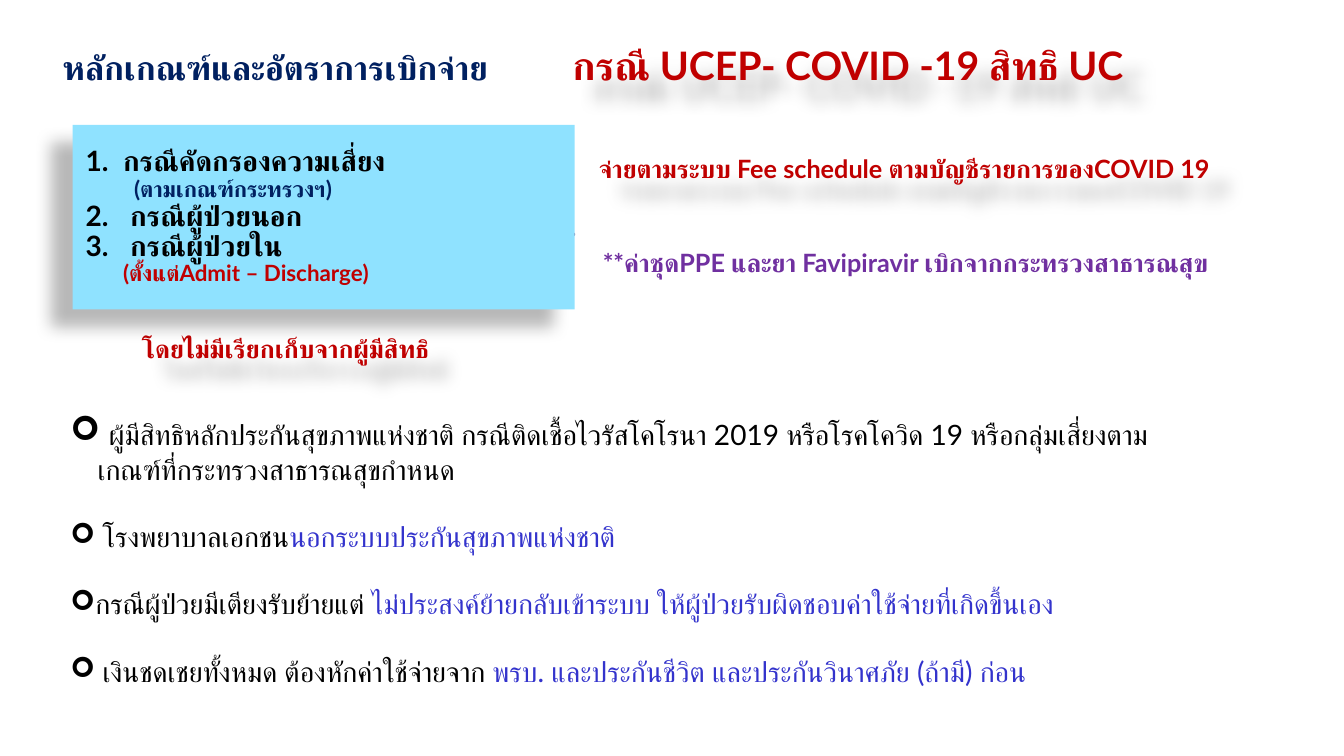
from lxml import etree
from pptx import Presentation
from pptx.dml.color import RGBColor
from pptx.enum.shapes import MSO_SHAPE
from pptx.enum.text import MSO_ANCHOR, MSO_AUTO_SIZE, PP_ALIGN
from pptx.oxml.ns import qn
from pptx.util import Inches, Pt

LEFT, CENTER = PP_ALIGN.LEFT, PP_ALIGN.CENTER
TOP, MIDDLE = MSO_ANCHOR.TOP, MSO_ANCHOR.MIDDLE
BLACK = RGBColor(0x00, 0x00, 0x00)
NAVY = RGBColor(0x00, 0x20, 0x60)
CRIMSON = RGBColor(0xC0, 0x00, 0x00)
PURPLE = RGBColor(0x70, 0x30, 0xA0)
BLUE = RGBColor(0x33, 0x33, 0xCC)
SKY = RGBColor(0x8F, 0xE2, 0xFF)
RED = RGBColor(0xFF, 0x00, 0x00)
MAUVE = RGBColor(0x80, 0x62, 0x92)
FONT = "Lato"


def add_span(para, text, size, color, bold=True):
    span = para.add_run()
    span.text = text
    span.font.name = FONT
    span.font.size = Pt(size)
    span.font.bold = bold
    span.font.color.rgb = color
    # Thai letters take the complex-script font
    etree.SubElement(span.font._element, qn("a:cs"), typeface=FONT)


def cast_shadow(shape, degrees):
    shape.shadow.inherit = False
    effects = shape._element.spPr.find(qn("a:effectLst"))
    shadow = etree.SubElement(
        effects, qn("a:outerShdw"), blurRad=str(Pt(11.8)), dist=str(Pt(19.7)),
        dir=str(degrees * 60000), algn="ctr", rotWithShape="0")
    tint = etree.SubElement(shadow, qn("a:srgbClr"), val="000000")
    etree.SubElement(tint, qn("a:alpha"), val="28000")


deck = Presentation()
deck.slide_width, deck.slide_height = Inches(13.33), Inches(7.5)
page = deck.slides.add_slide(deck.slide_layouts[5])

# Title
title = page.shapes.title
title.left, title.top = Inches(0.52), Inches(0.42)
title.width, title.height = Inches(6.82), Inches(0.5)
title.text_frame.auto_size = MSO_AUTO_SIZE.NONE
title.text_frame.vertical_anchor = TOP
title.text_frame.paragraphs[0].alignment = LEFT
add_span(title.text_frame.paragraphs[0], "หลักเกณฑ์และอัตราการเบิกจ่าย", 24, NAVY)

# Single-line statements: left, top, width, height, text, size, colour, align, spacing, shadow
STATEMENTS = [
    (3.89, 0.36, 9.04, 0.57, "กรณี UCEP- COVID -19 สิทธิ UC", 28, CRIMSON, CENTER, 1.0, True),
    (5.84, 1.51, 7.28, 0.58, "จ่ายตามระบบ Fee schedule ตามบัญชีรายการของCOVID 19",
     18, CRIMSON, LEFT, 0.9, True),
    (5.88, 2.4, 7.21, 0.4, "**ค่าชุดPPE และยา Favipiravir เบิกจากกระทรวงสาธารณสุข",
     18, PURPLE, LEFT, 1.0, False),
    (1.31, 3.26, 3.44, 0.4, "โดยไม่มีเรียกเก็บจากผู้มีสิทธิ", 18, CRIMSON, LEFT, 1.0, True),
]
for left, top, width, height, text, size, color, align, spacing, shaded in STATEMENTS:
    box = page.shapes.add_textbox(Inches(left), Inches(top), Inches(width), Inches(height))
    box.text_frame.word_wrap = True
    para = box.text_frame.paragraphs[0]
    para.alignment = align
    para.line_spacing = spacing
    add_span(para, text, size, color)
    if shaded:
        cast_shadow(box, 45)

# Arrow tucked behind the case panel
arrow = page.shapes.add_shape(
    MSO_SHAPE.RIGHT_ARROW, Inches(5.02), Inches(2), Inches(0.68), Inches(0.65))
arrow.shadow.inherit = False
arrow.fill.solid()
arrow.fill.fore_color.rgb = RED
arrow.line.color.rgb = MAUVE
arrow.line.width = Pt(1)

# Case panel: number (or None), indent, text, size, colour
CASES = [
    (1, 0.37, "กรณีคัดกรองความเสี่ยง", 20, BLACK),
    (None, 0.48, "(ตามเกณฑ์กระทรวงฯ)", 16, NAVY),
    (2, 0.44, "กรณีผู้ป่วยนอก", 20, BLACK),
    (3, 0.44, "กรณีผู้ป่วยใน", 20, BLACK),
    (None, 0.37, "(ตั้งแต่Admit – Discharge)", 16, CRIMSON),
]
panel = page.shapes.add_shape(
    MSO_SHAPE.RECTANGLE, Inches(0.72), Inches(1.24), Inches(4.98), Inches(1.83))
panel.fill.solid()
panel.fill.fore_color.rgb = SKY
panel.line.fill.background()
cast_shadow(panel, 141)
frame = panel.text_frame
frame.word_wrap = True
frame.vertical_anchor = MIDDLE
frame.margin_left = frame.margin_right = Inches(0.13)
frame.margin_top = frame.margin_bottom = Inches(0.07)
for index, (number, indent, text, size, color) in enumerate(CASES):
    para = frame.add_paragraph() if index else frame.paragraphs[0]
    para.alignment = LEFT
    para.line_spacing = 0.9
    props = para._p.get_or_add_pPr()
    props.set("marL", str(Inches(indent)))
    if number:
        props.set("indent", str(-Inches(indent)))
        etree.SubElement(props, qn("a:buFont"), typeface=FONT)
        etree.SubElement(props, qn("a:buAutoNum"), type="arabicPeriod", startAt=str(number))
    add_span(para, text, size, color)

# Conditions: bulleted, space before, spans of text, size, colour
CONDITIONS = [
    (True, 0, [(" ", 24, BLACK),
               ("ผู้มีสิทธิหลักประกันสุขภาพแห่งชาติ กรณีติดเชื้อไวรัสโคโรนา 2019 "
                "หรือโรคโควิด 19 หรือกลุ่มเสี่ยงตาม", 20, BLACK)]),
    (False, 0, [("เกณฑ์ที่กระทรวงสาธารณสุขกำหนด", 20, BLACK)]),
    (True, 24, [(" โรงพยาบาลเอกชน", 20, BLACK),
                ("นอกระบบประกันสุขภาพแห่งชาติ", 20, BLUE)]),
    (True, 24, [("กรณีผู้ป่วยมีเตียงรับย้ายแต่ ", 20, BLACK),
                ("ไม่ประสงค์ย้ายกลับเข้าระบบ ให้ผู้ป่วยรับผิดชอบค่าใช้จ่ายที่เกิดขึ้นเอง", 20, BLUE)]),
    (True, 24, [(" เงินชดเชยทั้งหมด ต้องหักค่าใช้จ่ายจาก ", 20, BLACK),
                ("พรบ. และประกันชีวิต และประกันวินาศภัย (ถ้ามี) ก่อน", 20, BLUE)]),
]
box = page.shapes.add_textbox(Inches(0.6), Inches(4.04), Inches(12.69), Inches(2.86))
box.text_frame.word_wrap = True
for index, (bulleted, gap, spans) in enumerate(CONDITIONS):
    para = box.text_frame.add_paragraph() if index else box.text_frame.paragraphs[0]
    if gap:
        para.space_before = Pt(gap)
    props = para._p.get_or_add_pPr()
    if bulleted:
        etree.SubElement(props, qn("a:buFont"), typeface="Wingdings")
        etree.SubElement(props, qn("a:buChar"), char="➢")
    else:
        props.set("marL", str(Inches(0.27)))
    for text, size, color in spans:
        add_span(para, text, size, color, bold=False)

deck.save("out.pptx")
